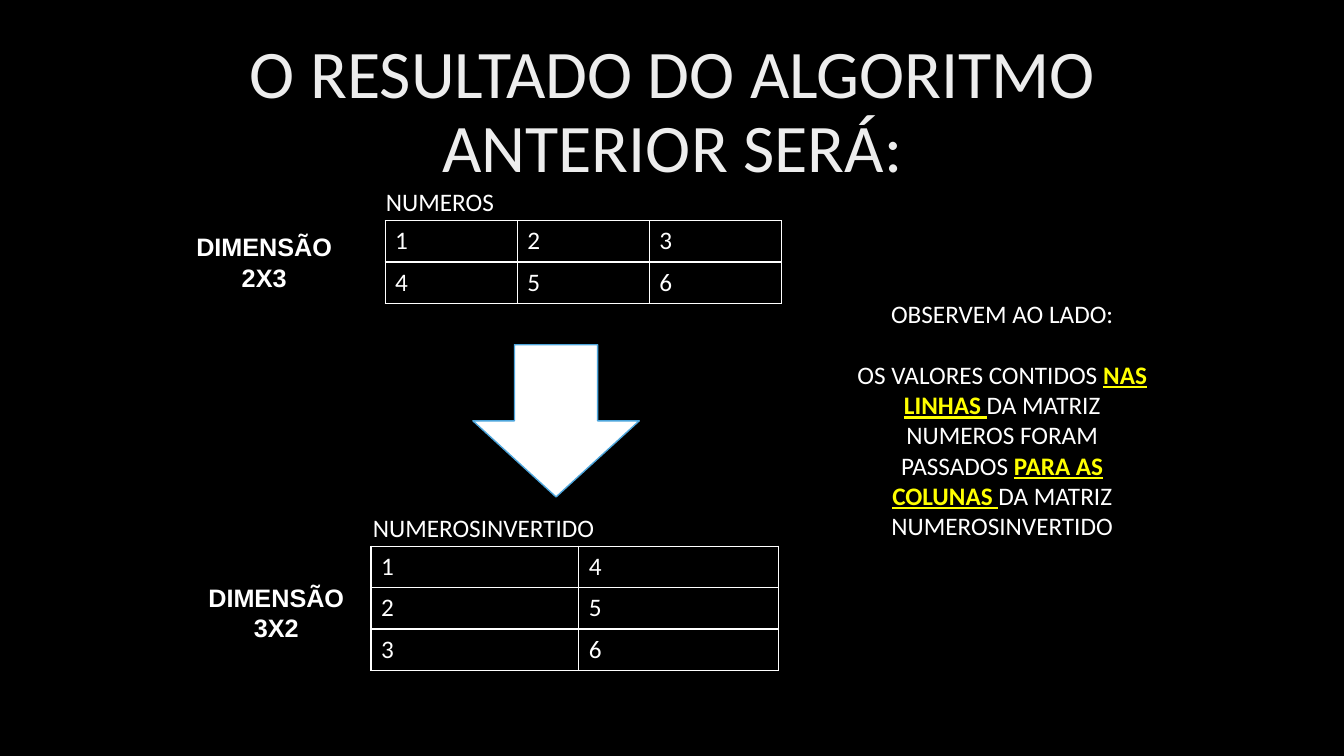
from dataclasses import dataclass

from lxml import etree
from pptx import Presentation
from pptx.dml.color import RGBColor
from pptx.enum.shapes import MSO_SHAPE
from pptx.enum.text import MSO_ANCHOR, PP_ALIGN
from pptx.oxml.ns import qn
from pptx.slide import Slide
from pptx.table import _Cell
from pptx.util import Inches, Pt

LEFT, CENTER = PP_ALIGN.LEFT, PP_ALIGN.CENTER
TOP, MIDDLE = MSO_ANCHOR.TOP, MSO_ANCHOR.MIDDLE
DOWN_ARROW = MSO_SHAPE.DOWN_ARROW
BLACK, WHITE, YELLOW = "000000", "FFFFFF", "FFFF00"
TITLE_GRAY, ARROW_BLUE = "EDEDED", "4EA6DC"
ROW_HEIGHT = 0.41


@dataclass(frozen=True)
class Run:
    text: str
    highlighted: bool = False


@dataclass(frozen=True)
class Label:
    box: tuple[float, float, float, float]
    paragraphs: tuple[tuple[Run, ...], ...]
    align: PP_ALIGN = LEFT
    anchor: MSO_ANCHOR = TOP
    font: str = "Calibri"
    size: float = 18
    color: str = WHITE
    bold: bool = False
    line_spacing: float = 1.0
    gap: float = 0


@dataclass(frozen=True)
class Matrix:
    left: float
    top: float
    col_widths: tuple[float, ...]
    rows: tuple[tuple[int, ...], ...]


LABELS = (
    Label((0.92, 0.4, 11.5, 1.45), ((Run("O RESULTADO DO ALGORITMO ANTERIOR SERÁ:"),),),
          CENTER, MIDDLE, size=48.6, color=TITLE_GRAY, line_spacing=0.9),
    Label((8.35, 2.91, 3.18, 2.52),
          ((Run("OBSERVEM AO LADO:"),),
           (Run("OS VALORES CONTIDOS "), Run("NAS LINHAS ", True),
            Run("DA MATRIZ NUMEROS FORAM PASSADOS "), Run("PARA AS COLUNAS ", True),
            Run("DA MATRIZ NUMEROSINVERTIDO"))),
          CENTER, gap=22),
    Label((3.73, 1.8, 2.49, 0.4), ((Run("NUMEROS"),),)),
    Label((3.6, 5.03, 4.05, 0.4), ((Run("NUMEROSINVERTIDO"),),)),
    Label((1.76, 2.25, 1.72, 0.71), ((Run("DIMENSÃO"),), (Run("2X3"),)),
          CENTER, font="Arial", bold=True),
    Label((1.88, 5.73, 1.72, 0.71), ((Run("DIMENSÃO"),), (Run("3X2"),)),
          CENTER, font="Arial", bold=True),
)

NUMEROS = ((1, 2, 3), (4, 5, 6))
MATRICES = (
    Matrix(3.82, 2.19, (1.31, 1.31, 1.31), NUMEROS),
    Matrix(3.68, 5.42, (2.06, 1.98), tuple(zip(*NUMEROS))),
)


def rgb(color: str) -> RGBColor:
    return RGBColor.from_string(color)


def add_label(s: Slide, label: Label) -> None:
    tf = s.shapes.add_textbox(*map(Inches, label.box)).text_frame
    tf.word_wrap = True
    tf.vertical_anchor = label.anchor
    for i, runs in enumerate(label.paragraphs):
        p = tf.add_paragraph() if i else tf.paragraphs[0]
        p.alignment = label.align
        p.line_spacing = label.line_spacing
        if i:
            p.space_before = Pt(label.gap)
        p.font.name = label.font
        p.font.size = Pt(label.size)
        p.font.bold = label.bold
        p.font.color.rgb = rgb(label.color)
        for run in runs:
            r = p.add_run()
            r.text = run.text
            if run.highlighted:
                r.font.bold = True
                r.font.underline = True
                r.font.color.rgb = rgb(YELLOW)


def add_borders(cell: _Cell) -> None:
    tc_pr = cell._tc.get_or_add_tcPr()
    for i, side in enumerate(("lnL", "lnR", "lnT", "lnB")):
        ln = etree.Element(qn(f"a:{side}"), w=str(Pt(1)))
        fill = etree.SubElement(ln, qn("a:solidFill"))
        etree.SubElement(fill, qn("a:srgbClr"), val=WHITE)
        tc_pr.insert(i, ln)


def add_matrix(s: Slide, matrix: Matrix) -> None:
    n_rows, n_cols = len(matrix.rows), len(matrix.col_widths)
    table = s.shapes.add_table(
        n_rows, n_cols, Inches(matrix.left), Inches(matrix.top),
        Inches(sum(matrix.col_widths)), Inches(ROW_HEIGHT * n_rows)).table
    table.first_row = False
    table.horz_banding = False
    for col, width in zip(table.columns, matrix.col_widths):
        col.width = Inches(width)
    for i, values in enumerate(matrix.rows):
        table.rows[i].height = Inches(ROW_HEIGHT)
        for j, value in enumerate(values):
            cell = table.cell(i, j)
            cell.text = str(value)
            cell.fill.background()
            add_borders(cell)
            p = cell.text_frame.paragraphs[0]
            p.font.name = "Calibri"
            p.font.size = Pt(18)
            p.font.color.rgb = rgb(WHITE)


def add_arrow(s: Slide) -> None:
    sp = s.shapes.add_shape(DOWN_ARROW, *map(Inches, (4.69, 3.42, 1.65, 1.51)))
    sp.shadow.inherit = False
    sp.fill.solid()
    sp.fill.fore_color.rgb = rgb(WHITE)
    sp.line.color.rgb = rgb(ARROW_BLUE)
    sp.line.width = Pt(1)


def main() -> None:
    prs = Presentation()
    prs.slide_width, prs.slide_height = Inches(13.33), Inches(7.5)
    s = prs.slides.add_slide(prs.slide_layouts[6])
    s.background.fill.solid()
    s.background.fill.fore_color.rgb = rgb(BLACK)
    for matrix in MATRICES:
        add_matrix(s, matrix)
    add_arrow(s)
    for label in LABELS:
        add_label(s, label)
    prs.save("out.pptx")


if __name__ == "__main__":
    main()
